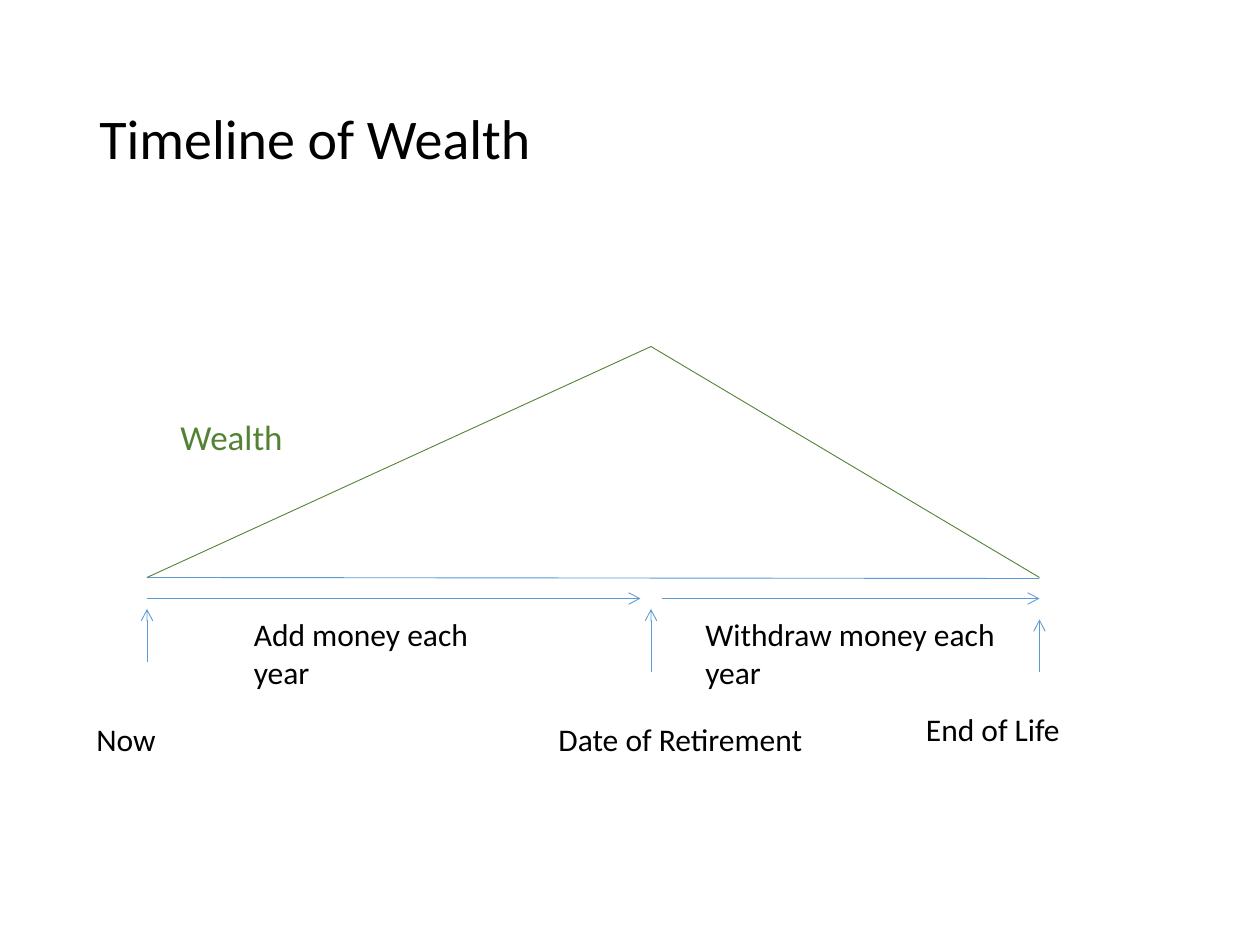
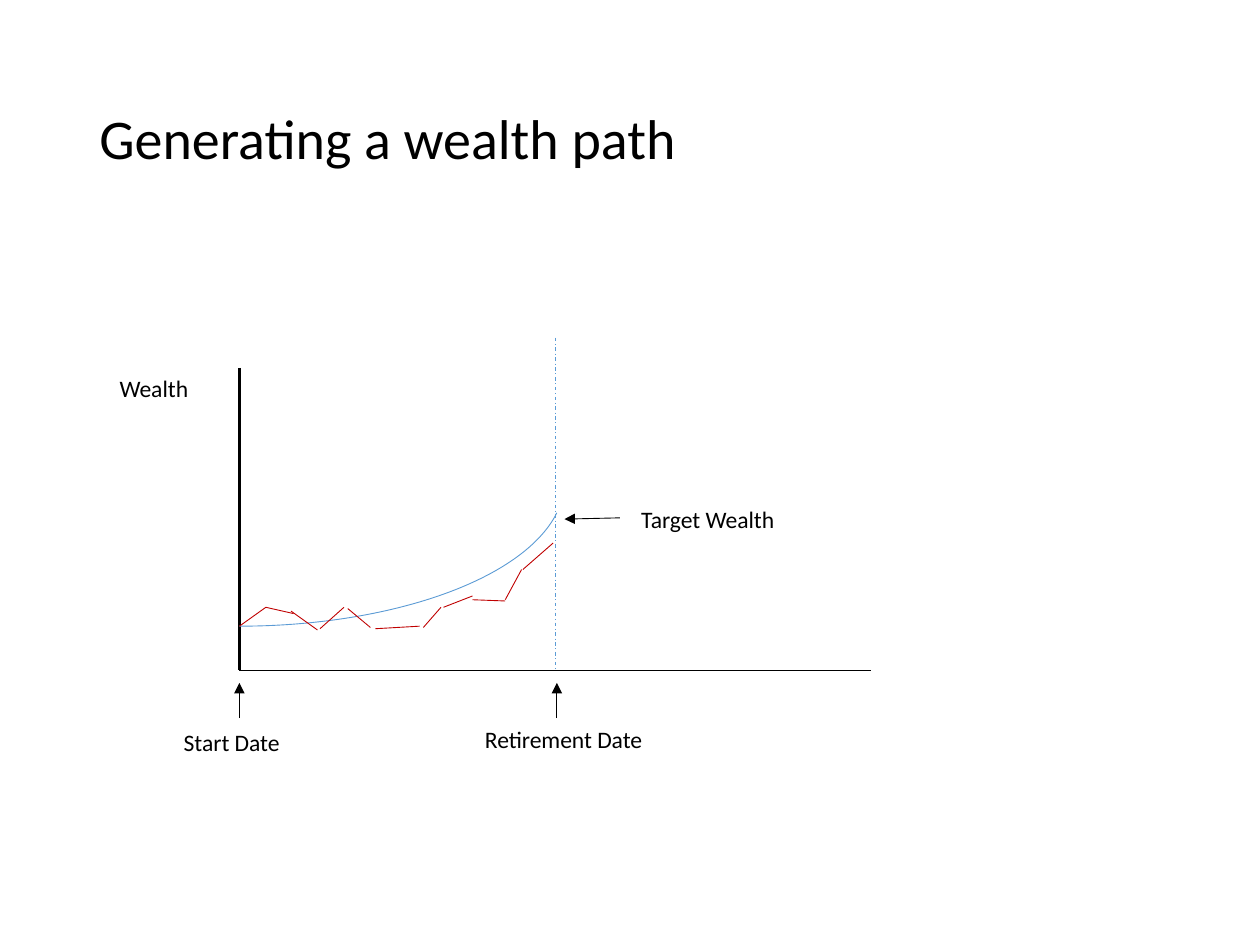
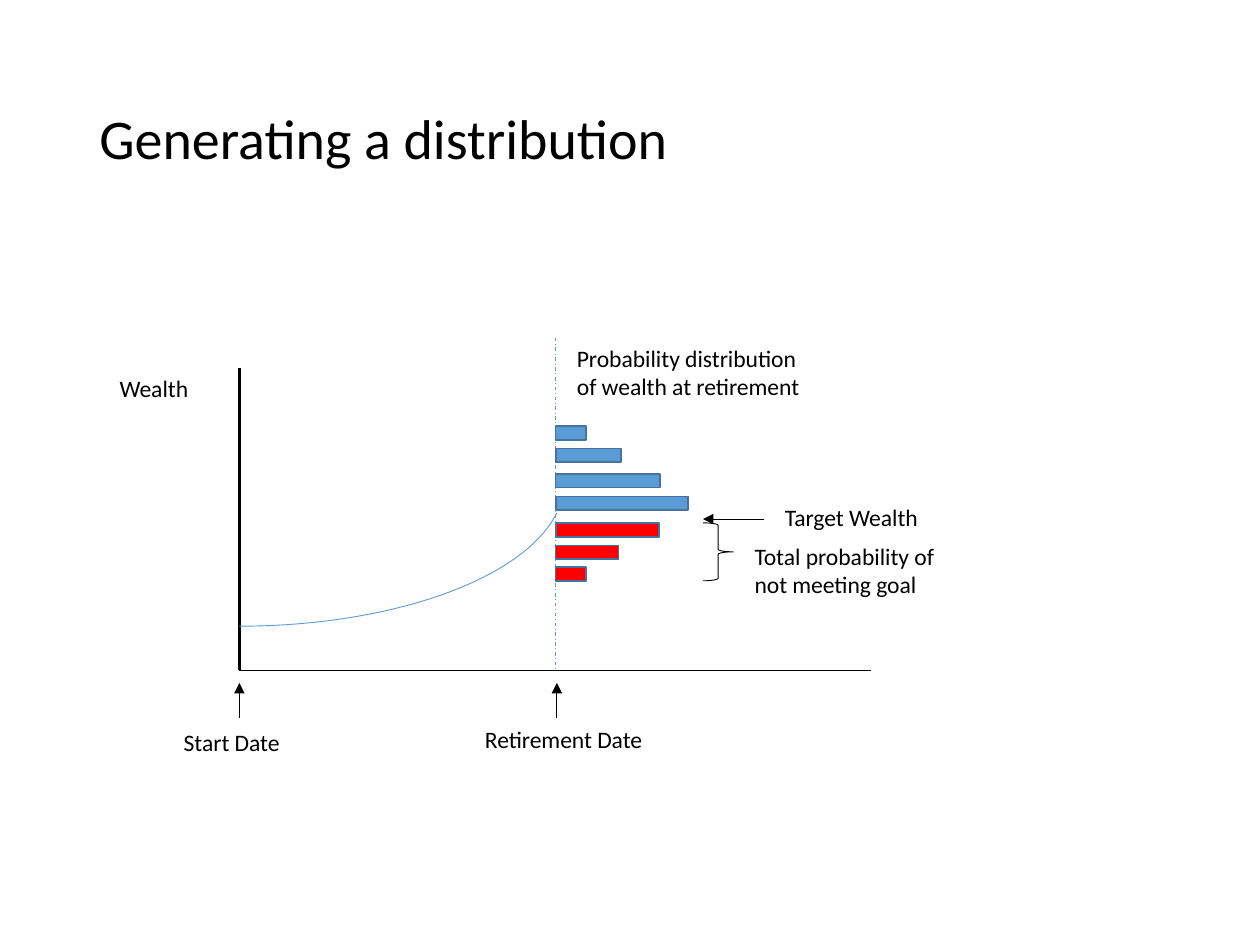
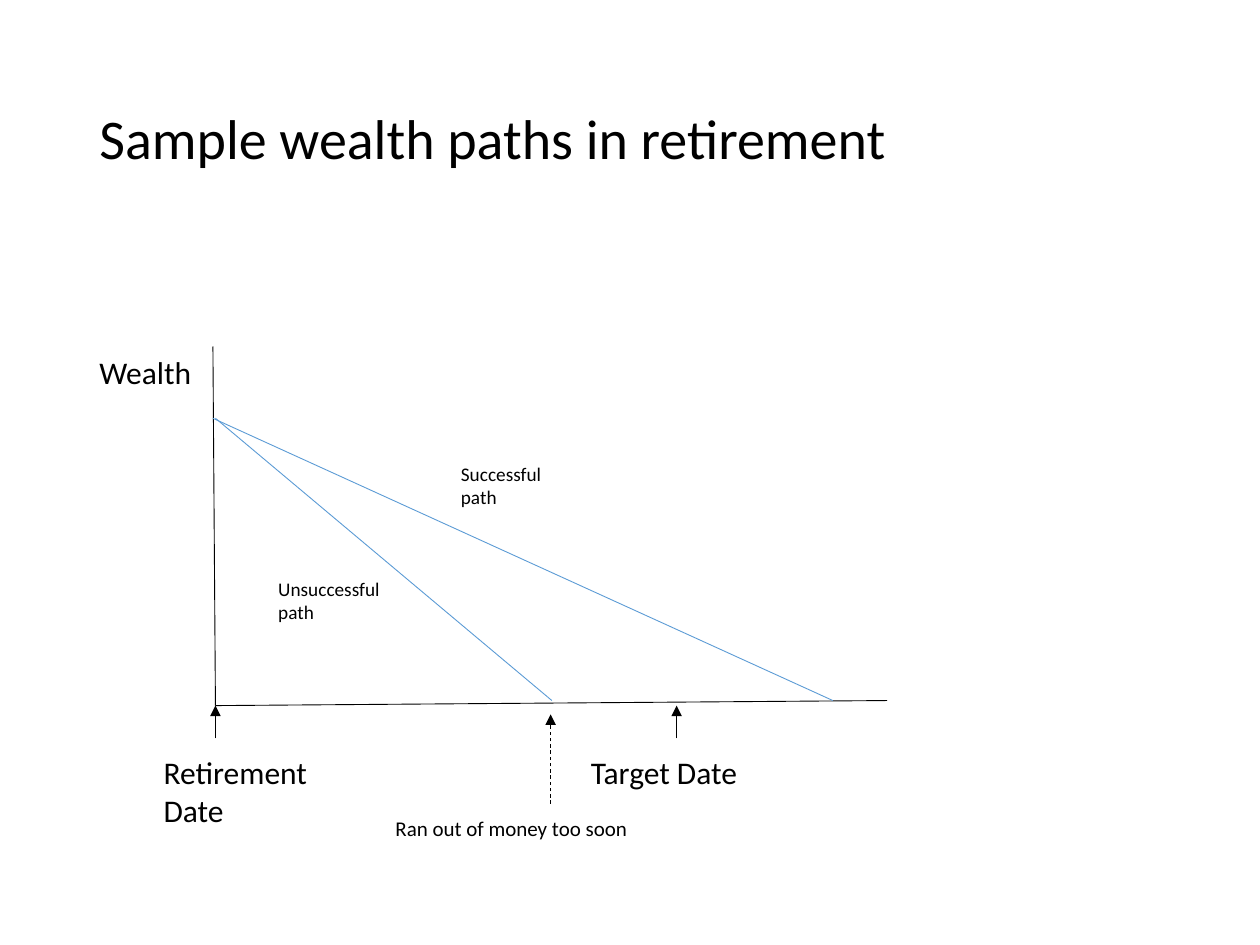
from dataclasses import dataclass

from lxml.etree import SubElement
from pptx import Presentation
from pptx.dml.color import RGBColor
from pptx.enum.dml import MSO_LINE
from pptx.enum.shapes import MSO_CONNECTOR, MSO_SHAPE
from pptx.enum.text import MSO_ANCHOR, MSO_AUTO_SIZE
from pptx.oxml.ns import qn
from pptx.util import Inches, Pt


@dataclass(frozen=True)
class Theme:
    font: str = "Calibri"
    black: str = "000000"
    blue: str = "5B9BD5"
    bar_edge: str = "43739E"
    green: str = "548235"
    dark_red: str = "C00000"
    red: str = "FF0000"
    title: float = 32
    large: float = 20
    body: float = 18
    label: float = 13.5
    small: float = 12
    note: float = 11
    thin: float = 0.5
    edge: float = 1
    thick: float = 1.5


THEME = Theme()


@dataclass(frozen=True)
class Box:
    """A region in inches, divided into a grid of columns and rows."""
    left: float
    top: float
    width: float
    height: float
    columns: int
    rows: int

    def point(self, column, row):
        return (Inches(self.left + column * self.width / self.columns),
                Inches(self.top + row * self.height / self.rows))

    def area(self, column, row, columns, rows):
        return (*self.point(column, row),
                Inches(columns * self.width / self.columns),
                Inches(rows * self.height / self.rows))


SLIDE_WIDTH, SLIDE_HEIGHT = 10, 7.5
TITLE_BOX = Box(0.69, 0.4, 8.62, 1.45, 1, 1)
TIMELINE_BOX = Box(14 / 12, 33 / 12, 85 / 12, 22 / 12, 85, 22)
GROWTH_BOX = Box(1.9, 2.92, 5, 2.4, 50, 24)
RETIREMENT_BOX = Box(1.7, 2.75, 5.35, 2.85, 107, 57)


def format_text(text_frame, text, size, color):
    text_frame.text = text
    for paragraph in text_frame.paragraphs:
        for run in paragraph.runs:
            run.font.name = THEME.font
            run.font.size = Pt(size)
            run.font.color.rgb = RGBColor.from_string(color)


def add_title(slide, text, box=TITLE_BOX):
    text_frame = slide.shapes.add_textbox(*box.area(0, 0, 1, 1)).text_frame
    text_frame.word_wrap = True
    text_frame.vertical_anchor = MSO_ANCHOR.MIDDLE
    format_text(text_frame, text, THEME.title, THEME.black)
    text_frame.paragraphs[0].line_spacing = 0.9


def add_label(slide, box, text, column, row, columns, size=THEME.label,
              lines=1, color=THEME.black, wrap=True):
    """Add a text box whose height follows from its number of lines."""
    left, top, width, _ = box.area(column, row, columns, 0)
    height = Inches(0.1 + lines * size * 1.2 / 72)
    text_frame = slide.shapes.add_textbox(left, top, width, height).text_frame
    text_frame.word_wrap = wrap
    text_frame.auto_size = MSO_AUTO_SIZE.SHAPE_TO_FIT_TEXT
    format_text(text_frame, text, size, color)


def style_line(line, color, width=THEME.thin):
    line.color.rgb = RGBColor.from_string(color)
    line.width = Pt(width)


def add_line(slide, box, start, end, color=THEME.black, width=THEME.thin,
             dash=None, head=None):
    connector = slide.shapes.add_connector(
        MSO_CONNECTOR.STRAIGHT, *box.point(*start), *box.point(*end))
    style_line(connector.line, color, width)
    if dash:
        connector.line.dash_style = dash
    properties = connector._element.spPr
    if head:
        SubElement(properties.find(qn("a:ln")), qn("a:tailEnd"), type=head)
    SubElement(properties, qn("a:effectLst"))


def add_pointer(slide, box, start, end, dash=None):
    add_line(slide, box, start, end, dash=dash, head="triangle")


def add_outline(slide, box, kind, area, color, width=THEME.thin, fill=None):
    shape = slide.shapes.add_shape(kind, *box.area(*area))
    shape.shadow.inherit = False
    style_line(shape.line, color, width)
    if fill:
        shape.fill.solid()
        shape.fill.fore_color.rgb = RGBColor.from_string(fill)
    else:
        shape.fill.background()
    return shape


def draw_timeline(slide, box):
    now, retirement, end_of_life, base = 0, 48, 85, 22
    add_line(slide, box, (now, base), (end_of_life, base + 0.1), THEME.blue)
    for column, tail, tip in ((now, 30, 25), (retirement, 31, 25),
                              (end_of_life, 31, 26)):
        add_line(slide, box, (column, tail), (column, tip), THEME.blue, head="arrow")
    for text, column, row, columns, lines in (
            ("Now", -6, 35, 12, 1),
            ("End of Life", 73, 34, 16, 1),
            ("Date of Retirement", 38, 35, 27, 1),
            ("Add money each year", 9, 25, 24, 2),
            ("Withdraw money each year", 52, 25, 30, 2)):
        add_label(slide, box, text, column, row, columns, THEME.body, lines)
    for column in (now, end_of_life):
        add_line(slide, box, (column, base), (retirement, 0), THEME.green)
    for start, end in ((now, retirement - 1), (retirement + 1, end_of_life)):
        add_line(slide, box, (start, 24), (end, 24), THEME.blue, head="arrow")
    add_label(slide, box, "Wealth", 2, 6, 13, THEME.large, color=THEME.green)


def draw_growth(slide, box):
    """Draw the axes, dates and target curve of wealth before retirement."""
    base, retirement = 24, 25.1
    add_line(slide, box, (0, 0), (0, base), width=THEME.thick)
    add_line(slide, box, (0, base), (50.1, base))
    add_line(slide, box, (retirement, -2.4), (retirement, base), THEME.blue,
             dash=MSO_LINE.DASH_DOT)
    curve = add_outline(slide, box, MSO_SHAPE.ARC, (-25.8, -2.4, 51.6, 22.9),
                        THEME.blue)
    curve.adjustments[0] = 162
    curve.adjustments[1] = 212.66
    curve._element.spPr.xfrm.set("flipV", "1")
    for column in (0, retirement + 0.1):
        add_pointer(slide, box, (column, 27.8), (column, 25))
    add_label(slide, box, "Wealth", -10.5, 0, 8.8)
    add_label(slide, box, "Start Date", -5.4, 28.1, 10.7)
    add_label(slide, box, "Retirement Date", 18.5, 27.8, 17.1)


def draw_wealth_path(slide, box):
    draw_growth(slide, box)
    add_pointer(slide, box, (30.2, 11.9), (25.8, 12))
    add_label(slide, box, "Target Wealth", 30.9, 10.4, 17.1)
    for start, end in (
            ((0, 20.5), (2.1, 19)), ((2.1, 19), (4.3, 19.5)),
            ((4.1, 19.3), (6.2, 20.8)), ((6.4, 20.7), (8.3, 19)),
            ((8.6, 19.1), (10.4, 20.6)), ((10.8, 20.7), (14.3, 20.5)),
            ((14.6, 20.6), (16, 19)), ((16.2, 19), (18.5, 18.1)),
            ((18.5, 18.4), (21.1, 18.5)), ((21.1, 18.4), (22.4, 16)),
            ((22.5, 16), (24.9, 13.9))):
        add_line(slide, box, start, end, THEME.dark_red)


def draw_distribution(slide, box):
    draw_growth(slide, box)
    target_row = 12
    add_pointer(slide, box, (41.6, target_row), (36.8, target_row))
    add_label(slide, box, "Target Wealth", 42.3, 10.2, 17.1)
    for row, columns in ((4.6, 2.4), (6.4, 5.2), (8.4, 8.3), (10.2, 10.5),
                         (12.3, 8.2), (14.1, 5), (15.8, 2.4)):
        fill = THEME.blue if row < target_row else THEME.red
        add_outline(slide, box, MSO_SHAPE.RECTANGLE, (25.1, row, columns, 1.1),
                    THEME.bar_edge, THEME.edge, fill)
    add_label(slide, box, "Probability distribution\nof wealth at retirement",
              25.8, -2.4, 20.1, lines=2, wrap=False)
    add_outline(slide, box, MSO_SHAPE.RIGHT_BRACE, (36.8, 12.3, 2.4, 4.6), THEME.black)
    add_label(slide, box, "Total probability of not meeting goal",
              39.9, 13.3, 18, lines=2)


def draw_retirement_paths(slide, box):
    origin = (0.2, 57)
    add_line(slide, box, (-0.2, 0), origin)
    add_line(slide, box, origin, (106.8, 56.2))
    add_line(slide, box, (0.2, 11.4), (53.6, 56.2), THEME.blue)
    add_line(slide, box, (-0.2, 11.4), (98.2, 56.2), THEME.blue)
    for column in (0.2, 73.4):
        add_pointer(slide, box, (column, 62.2), (column, 57))
    add_pointer(slide, box, (53.4, 72.6), (53.4, 58.4), MSO_LINE.DASH)
    for text, column, row, columns, size, lines in (
            ("Retirement Date", -10, 63.6, 36.2, THEME.body, 2),
            ("Wealth", -20.2, 0, 27, THEME.body, 1),
            ("Target Date", 57.8, 63.6, 31.6, THEME.body, 1),
            ("Unsuccessful\npath", 8.2, 35.6, 20.6, THEME.note, 2),
            ("Ran out of money too soon", 26.8, 73.4, 64.2, THEME.small, 1),
            ("Successful\npath", 37.2, 17.4, 20.6, THEME.note, 2)):
        add_label(slide, box, text, column, row, columns, size, lines)


def main():
    presentation = Presentation()
    presentation.slide_width = Inches(SLIDE_WIDTH)
    presentation.slide_height = Inches(SLIDE_HEIGHT)
    blank_layout = presentation.slide_layouts[6]
    for title, draw, box in (
            ("Timeline of Wealth", draw_timeline, TIMELINE_BOX),
            ("Generating a wealth path", draw_wealth_path, GROWTH_BOX),
            ("Generating a distribution", draw_distribution, GROWTH_BOX),
            ("Sample wealth paths in retirement", draw_retirement_paths,
             RETIREMENT_BOX)):
        slide = presentation.slides.add_slide(blank_layout)
        add_title(slide, title)
        draw(slide, box)
    presentation.save("out.pptx")


if __name__ == "__main__":
    main()
